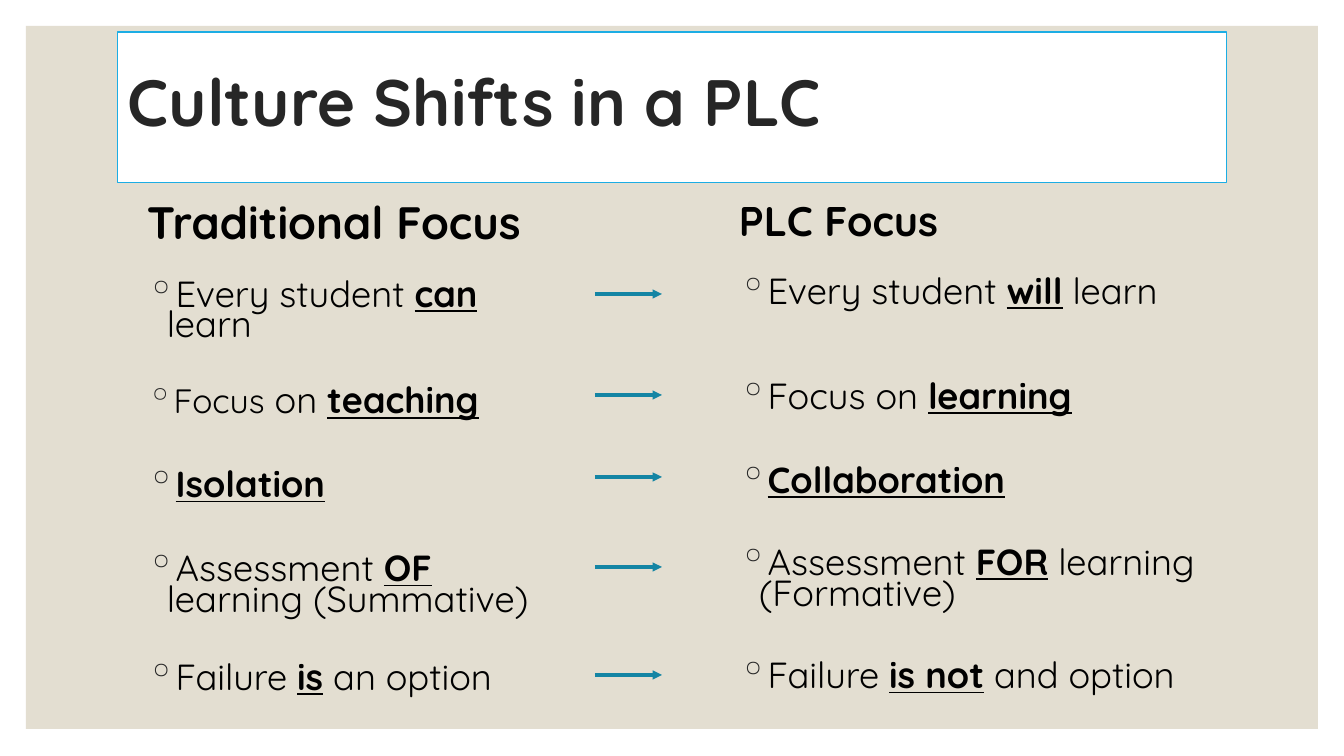
import pptx
import pptx.util
import pptx.dml.color
import pptx.enum.shapes
import pptx.enum.text
import pptx.oxml.ns
from dataclasses import dataclass
from lxml import etree

PX = 914400 / 100.8  # EMU in one px


@dataclass(frozen=True)
class Theme:
    font: str = "Quicksand"
    panel: str = "E3DED1"
    white: str = "FFFFFF"
    ink: str = "000000"
    dark: str = "262626"
    border: str = "1CADE4"
    arrow: str = "1485A4"
    title_size: float = 46.8
    body_size: float = 25.9
    small_size: float = 24.1


T = Theme()

# Each item: space before in points, then runs; *stars* mark the key words
TRADITIONAL = [
    (25.7, [("Every student *can* learn", T.body_size)]),
    (32.6, [("Focus", T.small_size), (" on *teaching*", T.body_size)]),
    (38.2, [("*Isolation*", T.body_size)]),
    (38.2, [("Assessment *OF* learning (Summative)", T.body_size)]),
    (34.2, [("Failure *is* an option", T.body_size)]),
]
PLC = [
    (25.7, [("Every student *will* learn", T.body_size)]),
    (53.2, [("Focus on *learning*", T.body_size)]),
    (38.2, [("*Collaboration*", T.body_size)]),
    (37.3, [("Assessment *FOR* learning (Formative)", T.body_size)]),
    (37.3, [("Failure *is not* and option", T.body_size)]),
]
ARROW_YS = [294, 395, 477, 567, 675]


def px(n):
    return pptx.util.Emu(round(n * PX))


def rgb(value):
    return pptx.dml.color.RGBColor.from_string(value)


def add_rect(s, x, y, w, h, fill, line=None):
    sp = s.shapes.add_shape(pptx.enum.shapes.MSO_SHAPE.RECTANGLE,
                            px(x), px(y), px(w), px(h))
    sp.shadow.inherit = False
    sp.fill.solid()
    sp.fill.fore_color.rgb = rgb(fill)
    if line:
        sp.line.color.rgb = rgb(line)
        sp.line.width = pptx.util.Pt(0.75)
    else:
        sp.line.fill.background()
    return sp


def add_run(p, text, size, color, bold=False, underline=False):
    r = p.add_run()
    r.text = text
    r.font.name = T.font
    r.font.size = pptx.util.Pt(size)
    r.font.color.rgb = rgb(color)
    r.font.bold = bold
    r.font.underline = underline


def add_bullet(p):
    pPr = p._p.get_or_add_pPr()
    pPr.set("marL", str(px(20)))
    pPr.set("indent", str(-px(20)))
    qn = pptx.oxml.ns.qn
    color = etree.SubElement(pPr, qn("a:buClr"))
    etree.SubElement(color, qn("a:srgbClr")).set("val", T.dark)
    etree.SubElement(pPr, qn("a:buChar")).set("char", "◦")


def add_title(s, text):
    sp = add_rect(s, 118, 32, 1109, 151, T.white, T.border)
    tf = sp.text_frame
    tf.word_wrap = True
    tf.vertical_anchor = pptx.enum.text.MSO_ANCHOR.MIDDLE
    p = tf.paragraphs[0]
    p.alignment = pptx.enum.text.PP_ALIGN.LEFT
    p.line_spacing = 0.8
    add_run(p, text, T.title_size, T.dark, bold=True)


def add_column(s, x, w, h, heading, heading_size, items):
    tf = s.shapes.add_textbox(px(x), px(204), px(w), px(h)).text_frame
    tf.word_wrap = True
    p = tf.paragraphs[0]
    p.line_spacing = 0.7
    p.space_before = pptx.util.Pt(9)
    add_run(p, heading, heading_size, T.ink, bold=True)
    for gap, pieces in items:
        p = tf.add_paragraph()
        p.line_spacing = 0.7
        p.space_before = pptx.util.Pt(gap)
        add_bullet(p)
        for text, size in pieces:
            for i, part in enumerate(text.split("*")):
                key = i % 2 == 1
                if part:
                    add_run(p, part, size, T.ink, bold=key, underline=key)


def add_arrow(s, x1, x2, y):
    c = s.shapes.add_connector(pptx.enum.shapes.MSO_CONNECTOR.STRAIGHT,
                               px(x1), px(y), px(x2), px(y))
    c.line.color.rgb = rgb(T.arrow)
    c.line.width = pptx.util.Pt(2.25)
    qn = pptx.oxml.ns.qn
    etree.SubElement(c.line._get_or_add_ln(), qn("a:tailEnd")).set("type", "triangle")
    etree.SubElement(c._element.spPr, qn("a:effectLst"))


def main():
    prs = pptx.Presentation()
    prs.slide_width, prs.slide_height = px(1344), px(756)
    s = prs.slides.add_slide(prs.slide_layouts[6])

    # Background panel
    add_rect(s, 26, 26, 1292, 703, T.panel)

    # Two columns of bullets
    add_column(s, 137, 420, 522, "Traditional Focus", 32.4, TRADITIONAL)
    add_column(s, 729, 498, 552, "PLC Focus", 29.6, PLC)

    # Arrows from the old focus to the new one
    for y in ARROW_YS:
        add_arrow(s, 595, 662, y)

    # Title box
    add_title(s, "Culture Shifts in a PLC")

    prs.save("out.pptx")


if __name__ == "__main__":
    main()
